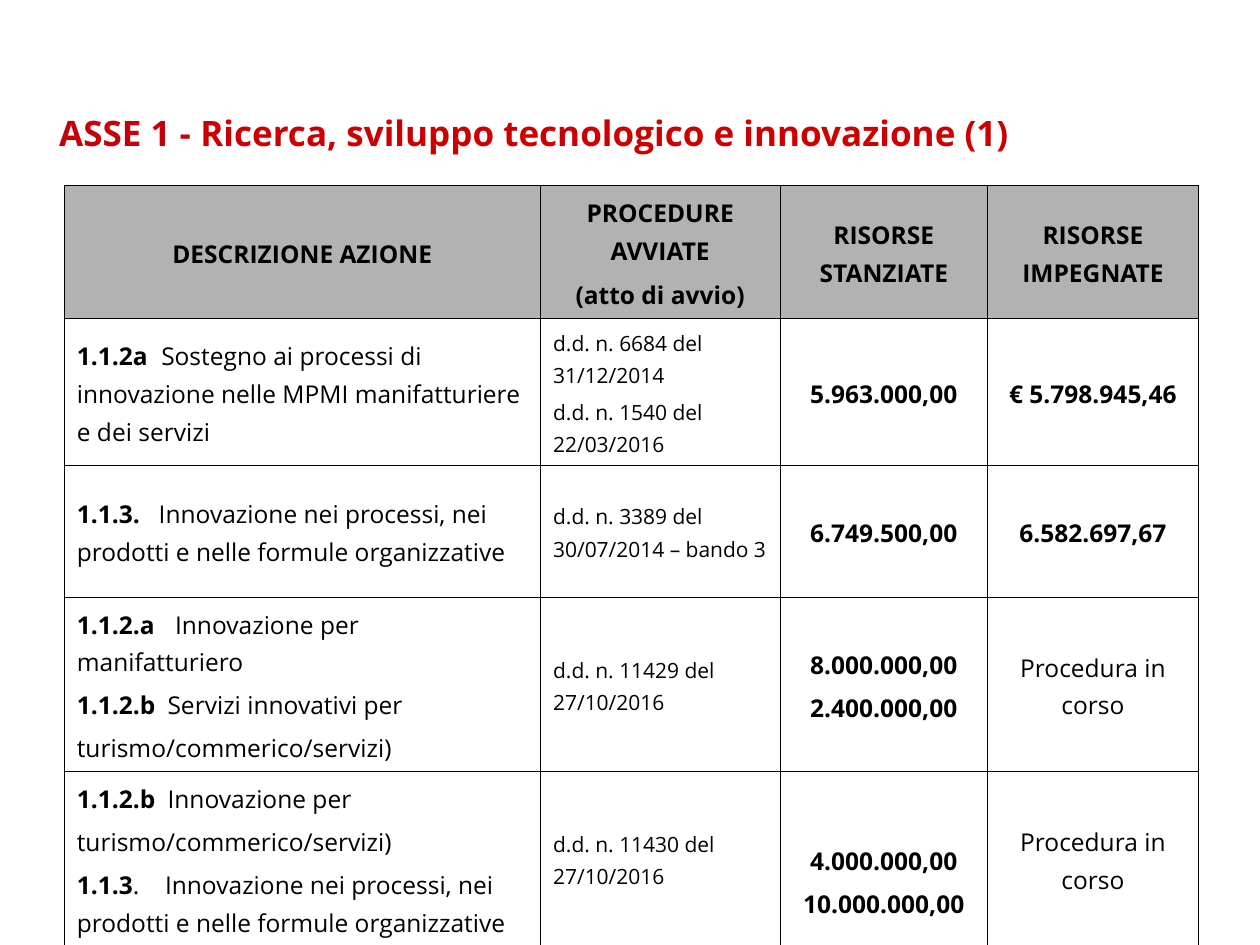
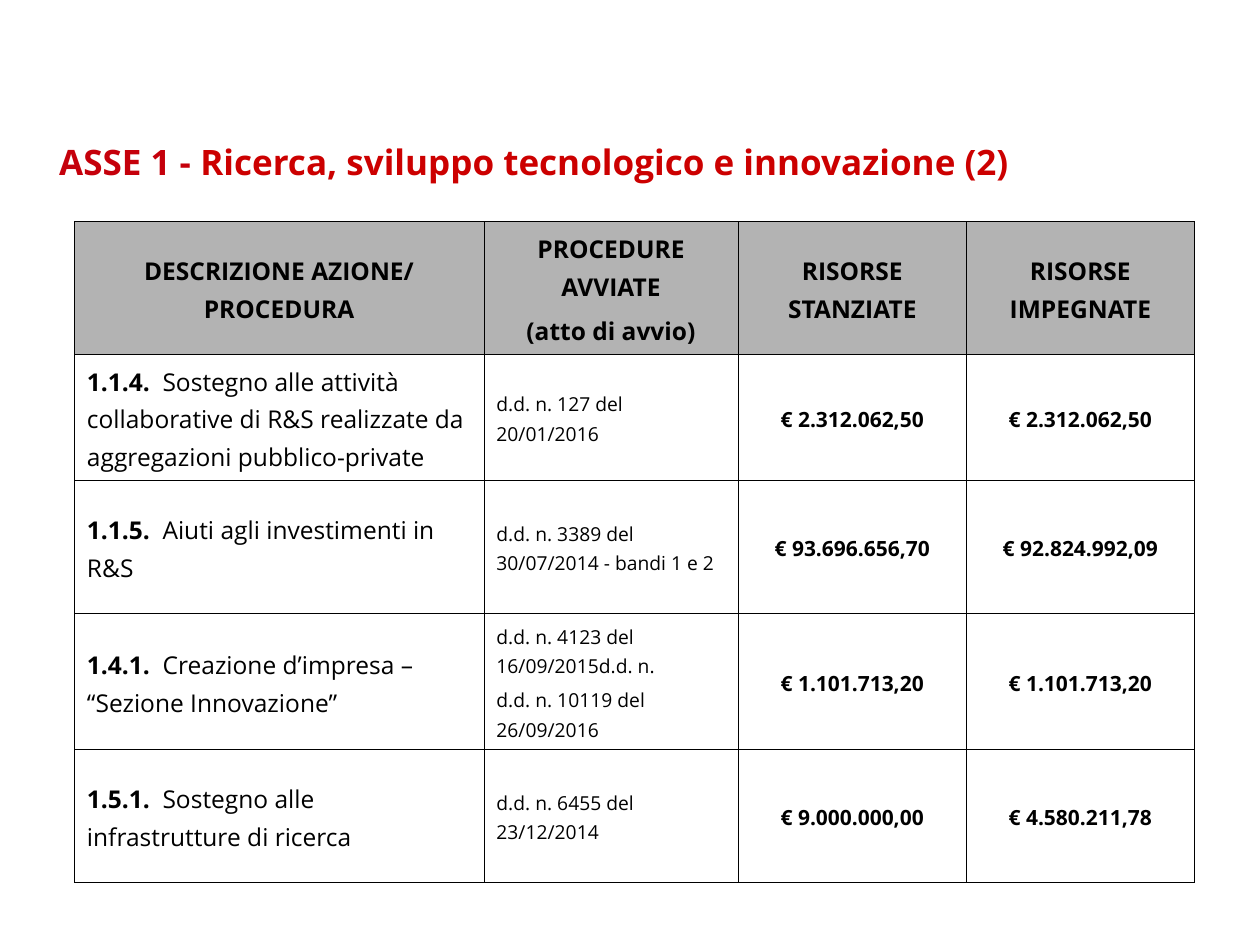
from lxml import etree
from pptx import Presentation
from pptx import util as u
from pptx.dml.color import RGBColor
from pptx.enum import text
from pptx.oxml.ns import qn

INK = {"axis": "C5000B", "title": "CC0000", "text": "000000",
       "head1": "B2B2B2", "head2": "B3B3B3"}
FONT = "Open Sans"
LEAD = 1.13
EDGE = u.Pt(0.45)
STOPS = {"1.1.2a": 0.67, "1.1.3.": 0.65, "1.1.2.a": 0.78, "1.1.2.b": 0.72,
         "1.1.3": 0.7, "1.1.4.": 0.6, "1.1.5.": 0.6, "1.4.1.": 0.6, "1.5.1.": 0.6}

GRID1 = {
    "box": (0.51, 1.47), "head": "head1", "sizes": (14, 12, 14, 14),
    "cols": (3.78, 1.9, 1.65, 1.67), "rows": (1.06, 1.16, 1.05, 1.38, 1.39),
    "cells": (
        ("DESCRIZIONE AZIONE|", "PROCEDURE AVVIATE|\n(atto di avvio)|",
         "RISORSE STANZIATE|", "RISORSE IMPEGNATE|"),
        ("1.1.2a|\tSostegno ai processi di innovazione nelle MPMI manifatturiere e dei servizi",
         "|d.d. n. 6684 del 31/12/2014\n|d.d. n. 1540 del 22/03/2016",
         "5.963.000,00|", "€ 5.798.945,46|"),
        ("1.1.3.|\tInnovazione nei processi, nei prodotti e nelle formule organizzative",
         "|d.d. n. 3389 del 30/07/2014 – bando 3", "6.749.500,00|", "6.582.697,67|"),
        ("1.1.2.a|\tInnovazione per manifatturiero\n"
         "1.1.2.b|\tServizi innovativi per\n|turismo/commerico/servizi)",
         "|d.d. n. 11429 del 27/10/2016",
         "8.000.000,00|\n2.400.000,00|", "|Procedura in corso"),
        ("1.1.2.b|\tInnovazione per\n|turismo/commerico/servizi)\n"
         "1.1.3|.\tInnovazione nei processi, nei prodotti e nelle formule organizzative",
         "|d.d. n. 11430 del 27/10/2016",
         "4.000.000,00|\n10.000.000,00|", "|Procedura in corso"),
    ),
}
GRID2 = {
    "box": (0.59, 1.76), "head": "head2", "sizes": (14, 11, 12, 12),
    "cols": (3.25, 2.02, 1.81, 1.81), "rows": (1.05, 1, 1.06, 1.08, 1.05),
    "cells": (
        ("DESCRIZIONE AZIONE/ PROCEDURA|", "PROCEDURE AVVIATE|\n(atto di avvio)|",
         "RISORSE STANZIATE|", "RISORSE IMPEGNATE|"),
        ("1.1.4.|\tSostegno alle attività collaborative di R&S realizzate da "
         "aggregazioni pubblico-private",
         "|d.d. n. 127 del 20/01/2016", "€ 2.312.062,50|", "€ 2.312.062,50|"),
        ("1.1.5.|\tAiuti agli investimenti in R&S",
         "|d.d. n. 3389 del 30/07/2014 - bandi 1 e 2",
         "€ 93.696.656,70|", "€ 92.824.992,09|"),
        ("1.4.1.|\tCreazione d’impresa – “Sezione Innovazione”",
         "|d.d. n. 4123 del 16/09/2015d.d. n.\n|d.d. n. 10119 del 26/09/2016",
         "€ 1.101.713,20|", "€ 1.101.713,20|"),
        ("1.5.1.|\tSostegno alle infrastrutture di ricerca",
         "|d.d. n. 6455 del 23/12/2014", "€ 9.000.000,00|", "€ 4.580.211,78|"),
    ),
}


def tone(name):
    """Return the named colour."""
    return RGBColor.from_string(INK[name])


def add_title(slide, top, part):
    """Write the red axis title at the given height."""
    box = slide.shapes.add_textbox(u.Inches(0.35), u.Inches(top), u.Inches(9.13), u.Inches(0.55))
    frame = box.text_frame
    frame.word_wrap = True
    frame.margin_left = u.Inches(0.12)
    frame.margin_top = frame.margin_right = frame.margin_bottom = 0
    para = frame.paragraphs[0]
    para.line_spacing = LEAD
    para.font.name, para.font.size, para.font.bold = FONT, u.Pt(20), True
    for words, name in (("ASSE 1 - ", "axis"),
                        (f"Ricerca, sviluppo tecnologico e innovazione ({part})", "title")):
        run = para.add_run()
        run.text = words
        run.font.color.rgb = tone(name)


def add_edges(cell):
    """Draw a thin black border on all four sides of a cell."""
    props = cell._tc.get_or_add_tcPr()
    for spot, side in enumerate(("lnL", "lnR", "lnT", "lnB")):
        line = etree.Element(qn(f"a:{side}"), w=str(int(EDGE)))
        fill = etree.SubElement(line, qn("a:solidFill"))
        etree.SubElement(fill, qn("a:srgbClr"), val=INK["text"])
        props.insert(spot, line)


def add_stop(para, key):
    """Set the tab stop that follows an action code."""
    tabs = etree.SubElement(para._p.get_or_add_pPr(), qn("a:tabLst"))
    etree.SubElement(tabs, qn("a:tab"), pos=str(int(u.Inches(STOPS[key]))), algn="l")


def fill_cell(cell, words, size, gap, mid):
    """Write the lines of a cell, bold before the bar and plain after it."""
    cell.vertical_anchor = text.MSO_ANCHOR.MIDDLE
    frame = cell.text_frame
    for num, line in enumerate(words.split("\n")):
        para = frame.add_paragraph() if num else frame.paragraphs[0]
        para.alignment = text.PP_ALIGN.CENTER if mid else text.PP_ALIGN.LEFT
        para.line_spacing = LEAD
        para.space_before = u.Pt(gap if num else 0)
        bold, plain = line.split("|")
        if "\t" in plain:
            add_stop(para, bold)
        font = para.font
        font.name, font.size, font.color.rgb = FONT, u.Pt(size), tone("text")
        for part, heavy in ((bold, True), (plain, False)):
            if part:
                run = para.add_run()
                run.text = part
                run.font.bold = heavy


def add_grid(slide, grid):
    """Build the table of actions and return it."""
    left, top = grid["box"]
    cols, rows = grid["cols"], grid["rows"]
    table = slide.shapes.add_table(
        len(rows), len(cols), u.Inches(left), u.Inches(top),
        u.Inches(sum(cols)), u.Inches(sum(rows))).table
    table.horz_banding = False
    for col, width in zip(table.columns, cols):
        col.width = u.Inches(width)
    for row, (tall, line) in enumerate(zip(rows, grid["cells"])):
        table.rows[row].height = u.Inches(tall)
        for col, words in enumerate(line):
            cell = table.cell(row, col)
            if row:
                cell.fill.background()
                fill_cell(cell, words, grid["sizes"][col], 2.5 if col == 1 else 3, col > 1)
            else:
                cell.fill.solid()
                cell.fill.fore_color.rgb = tone(grid["head"])
                fill_cell(cell, words, 14, 3.5, True)
            add_edges(cell)
    return table


def main():
    """Build both slides and save the deck."""
    deck = Presentation()
    deck.slide_width, deck.slide_height = u.Inches(10), u.Inches(7.5)
    tables = []
    for part, (top, grid) in enumerate(((0.84, GRID1), (1.07, GRID2)), 1):
        slide = deck.slides.add_slide(deck.slide_layouts[6])
        add_title(slide, top, part)
        tables.append(add_grid(slide, grid))
    tables[0].cell(4, 2).margin_top = u.Inches(0.4)
    deck.save("out.pptx")


if __name__ == "__main__":
    main()
